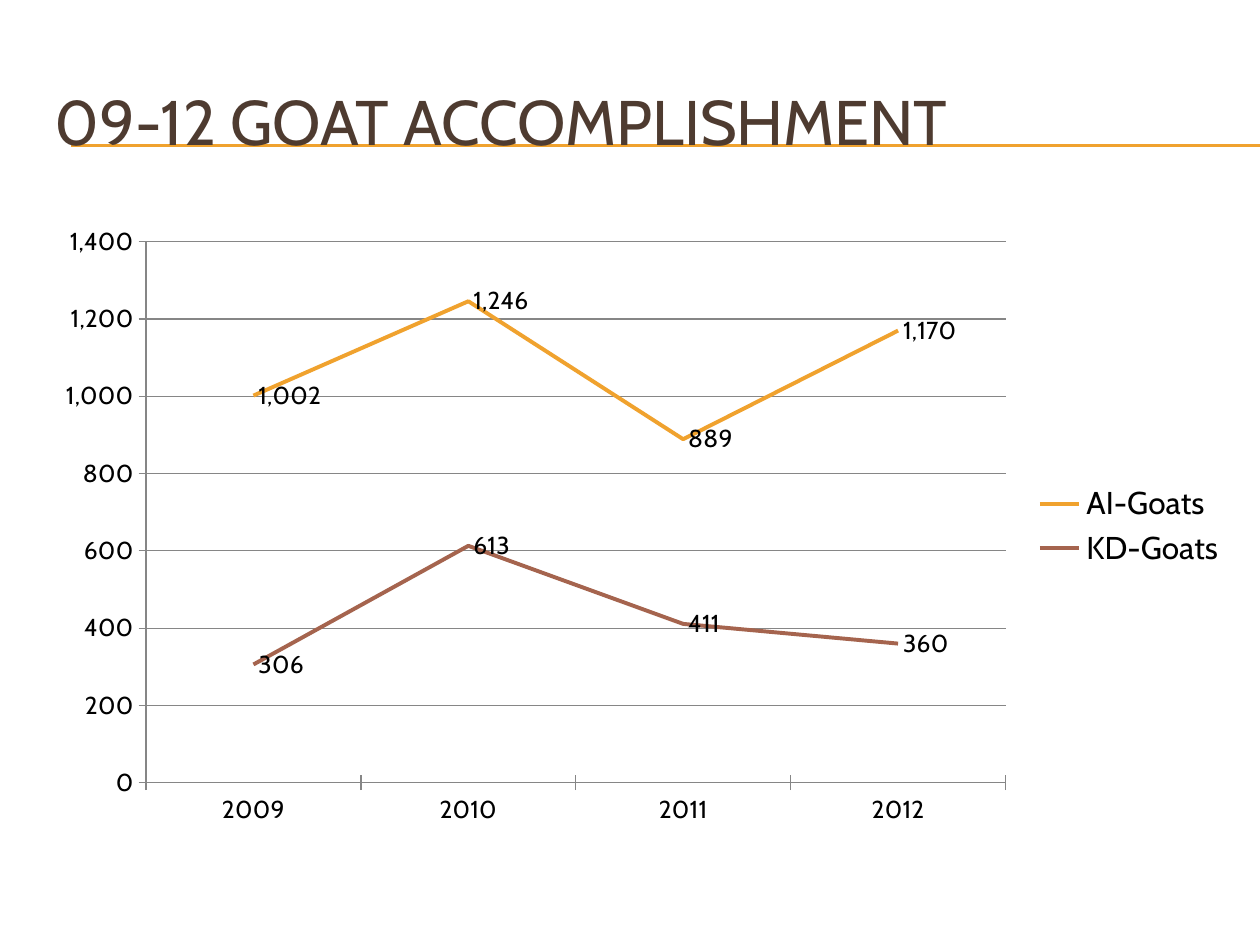
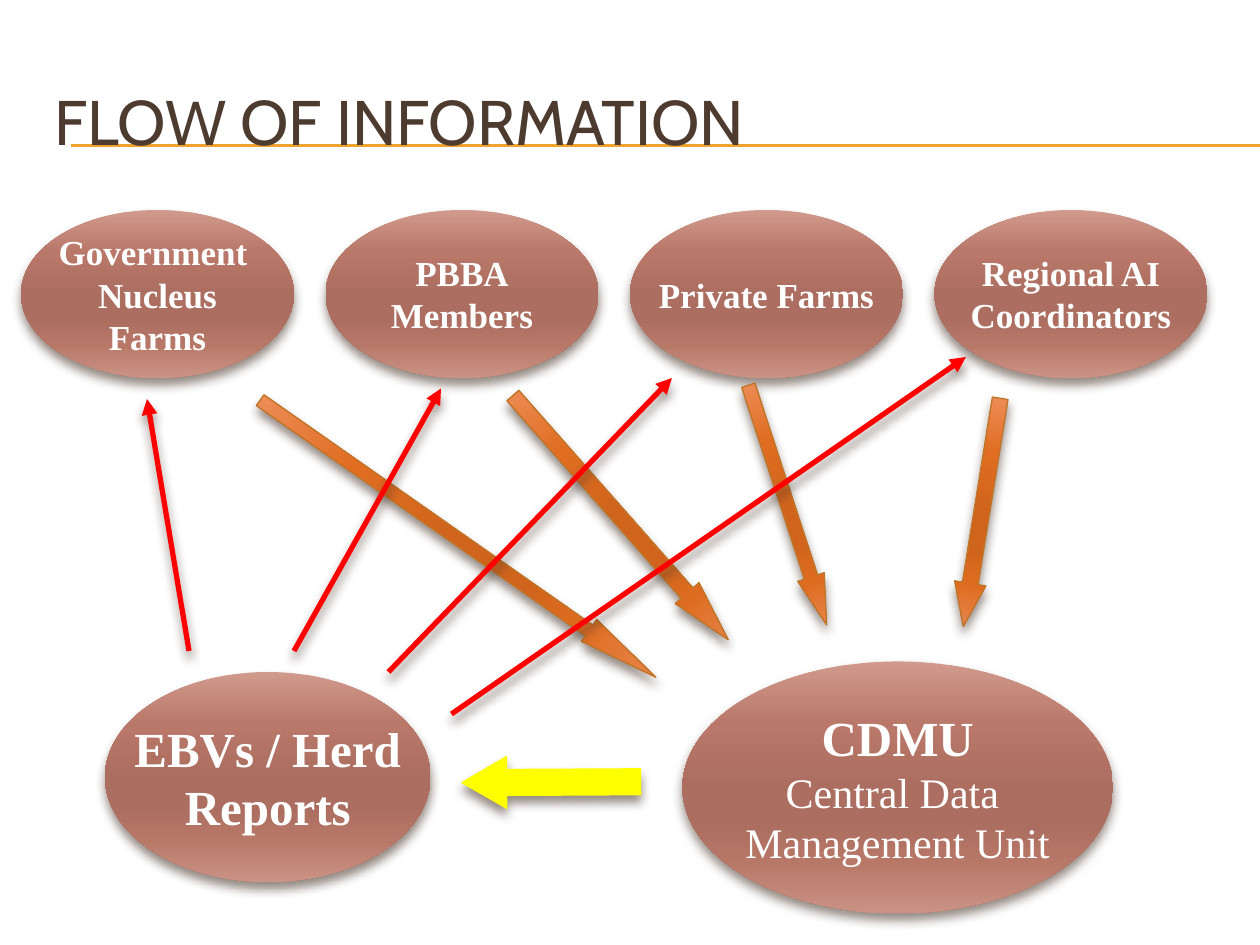
"""Build two slides: a goat accomplishment chart and an information flow diagram."""
from dataclasses import dataclass

from lxml.etree import SubElement
from pptx import Presentation
from pptx.chart.data import CategoryChartData
from pptx.dml.color import RGBColor
from pptx.enum.chart import (XL_CHART_TYPE, XL_LABEL_POSITION, XL_LEGEND_POSITION,
                             XL_MARKER_STYLE, XL_TICK_MARK)
from pptx.enum.shapes import MSO_CONNECTOR, MSO_SHAPE
from pptx.enum.text import MSO_ANCHOR, PP_ALIGN
from pptx.oxml.ns import qn
from pptx.shapes.autoshape import Shape
from pptx.shapes.connector import Connector
from pptx.slide import Slide
from pptx.util import Emu, Inches, Pt

COLORS = {
    "title": "4E3B30", "gold": "F0A22E", "brown": "A5644E", "text": "000000",
    "axis": "868686", "label": "FFFFFF", "feedback": "FF0000", "report": "FFFF00",
    "arrow edge": "C17529", "shadow": "4E3B30",
}
STOPS = (0, 25, 50, 65, 80, 100)
GRADIENTS = {
    "brown": ("D09A8D", "B97869", "AB6E60", "AB6E60", "B87868", "CA9386"),
    "orange": ("EE8F5B", "E06D21", "D0641C", "D0641C", "DE6C20", "E88852"),
}
SLIDE_WIDTH, SLIDE_HEIGHT = Inches(10), Inches(7.5)
COLUMNS, ROWS = 120, 90
HEADING_FONT, DIAGRAM_FONT = "Cabin", "Times New Roman"


@dataclass(frozen=True)
class Line:
    text: str
    size: int
    bold: bool = True


@dataclass(frozen=True)
class Node:
    column: float
    row: float
    width: float
    height: float
    lines: tuple[Line, ...]


@dataclass(frozen=True)
class BlockArrow:
    center_column: float
    center_row: float
    width: float
    length: float
    rotation: float
    head: float
    gradient: str = "orange"
    edge: str = "arrow edge"


@dataclass(frozen=True)
class Route:
    start: tuple[float, float]
    end: tuple[float, float]


SOURCE_NAMES = (("Government ", "Nucleus", "Farms"), ("PBBA", "Members"),
                ("Private Farms",), ("Regional AI", "Coordinators"))
NODES = [
    Node(2 + 29 * index, 20, 26, 16, tuple(Line(name, 20) for name in names))
    for index, names in enumerate(SOURCE_NAMES)
] + [
    Node(10, 64, 31, 20, (Line("EBVs / Herd", 28), Line("Reports", 28))),
    Node(65, 63, 41, 24, (Line("CDMU", 28), Line("Central Data ", 24, False),
                          Line("Management Unit", 24, False))),
]
BLOCK_ARROWS = (
    BlockArrow(43.62, 51.3, 2.52, 46, 305, 3.08),
    BlockArrow(59.1, 49.3, 3, 31, 318.6, 1.97),
    BlockArrow(75, 48.1, 2.64, 24, 341.9, 1.81),
    BlockArrow(93.5, 48.8, 3, 22, 9.2, 1.38),
    BlockArrow(52.5, 74.5, 4.92, 17, 89.7, 0.86, "", "report"),
)
FEEDBACK_ROUTES = (
    Route((18, 62), (14, 38)), Route((28, 62), (42, 37)),
    Route((37, 64), (64, 36)), Route((43, 68), (92, 34)),
)
YEARS = ("2009", "2010", "2011", "2012")
GOATS = {
    "AI-Goats": ("gold", (1002, 1246, 889, 1170)),
    "KD-Goats": ("brown", (306, 613, 411, 360)),
}


def color(name: str) -> RGBColor:
    return RGBColor.from_string(COLORS[name])


def across(columns: float) -> Emu:
    return Emu(round(SLIDE_WIDTH * columns / COLUMNS))


def down(rows: float) -> Emu:
    return Emu(round(SLIDE_HEIGHT * rows / ROWS))


def box(column: float, row: float, width: float, height: float) -> tuple[Emu, ...]:
    return across(column), down(row), across(width), down(height)


def set_effects(shape: Shape | Connector, shadow: bool) -> None:
    properties = shape._element.spPr
    effects = properties.find(qn("a:effectLst"))
    if effects is None:
        effects = SubElement(properties, qn("a:effectLst"))
    if shadow:
        outer = SubElement(effects, qn("a:outerShdw"), blurRad=str(Pt(6)), dist=str(Pt(4)),
                           dir="5400000", rotWithShape="0")
        tint = SubElement(outer, qn("a:srgbClr"), val=COLORS["shadow"])
        SubElement(tint, qn("a:alpha"), val="60000")


def fill_gradient(shape: Shape, name: str) -> None:
    shape.fill.gradient()
    gradient = shape._element.spPr.find(qn("a:gradFill"))
    for child in list(gradient):
        gradient.remove(child)
    stops = SubElement(gradient, qn("a:gsLst"))
    for position, value in zip(STOPS, GRADIENTS[name]):
        stop = SubElement(stops, qn("a:gs"), pos=str(position * 1000))
        SubElement(stop, qn("a:srgbClr"), val=value)
    SubElement(gradient, qn("a:lin"), ang="5400000", scaled="0")


def add_line(slide: Slide, route: Route, color_name: str, width: float,
             arrow: bool = False) -> None:
    connector = slide.shapes.add_connector(
        MSO_CONNECTOR.STRAIGHT, across(route.start[0]), down(route.start[1]),
        across(route.end[0]), down(route.end[1]))
    connector.line.color.rgb = color(color_name)
    connector.line.width = Pt(width)
    if arrow:
        SubElement(connector.line._get_or_add_ln(), qn("a:tailEnd"), type="triangle")
    set_effects(connector, shadow=arrow)


def add_titled_slide(presentation: Presentation, title: str) -> Slide:
    slide = presentation.slides.add_slide(presentation.slide_layouts[6])
    for row in (13.8, 13.92):
        add_line(slide, Route((6.75, row), (COLUMNS, row)), "gold", 0.75)
    frame = slide.shapes.add_textbox(*box(4, 6, 114, 11)).text_frame
    frame.word_wrap = True
    frame.vertical_anchor = MSO_ANCHOR.MIDDLE
    run = frame.paragraphs[0].add_run()
    run.text = title
    run.font.name = HEADING_FONT
    run.font.size = Pt(36)
    run.font.color.rgb = color("title")
    return slide


def add_goat_chart(slide: Slide) -> None:
    data = CategoryChartData(number_format="#,##0")
    data.categories = YEARS
    for name, (_, values) in GOATS.items():
        data.add_series(name, values)
    chart = slide.shapes.add_chart(XL_CHART_TYPE.LINE, *box(4, 20.4, 114, 59.4), data).chart
    chart.has_title = False
    chart.font.name = HEADING_FONT
    chart.font.size = Pt(18)
    chart.font.color.rgb = color("text")
    chart.has_legend = True
    chart.legend.position = XL_LEGEND_POSITION.RIGHT
    chart.legend.include_in_layout = False
    for axis in (chart.category_axis, chart.value_axis):
        axis.major_tick_mark = XL_TICK_MARK.CROSS
        axis.tick_labels.font.size = Pt(14)
        axis.format.line.color.rgb = color("axis")
    chart.value_axis.tick_labels.number_format = "#,##0"
    chart.value_axis.tick_labels.number_format_is_linked = False
    chart.value_axis.has_major_gridlines = True
    chart.value_axis.major_gridlines.format.line.color.rgb = color("axis")
    for series in chart.plots[0].series:
        series.smooth = False
        series.marker.style = XL_MARKER_STYLE.NONE
        series.format.line.color.rgb = color(GOATS[series.name][0])
        series.format.line.width = Pt(2.25)
        labels = series.data_labels
        labels.show_value = True
        labels.position = XL_LABEL_POSITION.RIGHT
        labels.number_format = "#,##0"
        labels.number_format_is_linked = False
        labels.font.size = Pt(14)


def add_node(slide: Slide, node: Node) -> None:
    shape = slide.shapes.add_shape(
        MSO_SHAPE.OVAL, *box(node.column, node.row, node.width, node.height))
    shape.shadow.inherit = False
    fill_gradient(shape, "brown")
    shape.line.fill.background()
    set_effects(shape, shadow=True)
    frame = shape.text_frame
    frame.word_wrap = False
    frame.vertical_anchor = MSO_ANCHOR.MIDDLE
    for index, line in enumerate(node.lines):
        paragraph = frame.add_paragraph() if index else frame.paragraphs[0]
        paragraph.alignment = PP_ALIGN.CENTER
        run = paragraph.add_run()
        run.text = line.text
        run.font.name = DIAGRAM_FONT
        run.font.size = Pt(line.size)
        run.font.bold = line.bold
        run.font.color.rgb = color("label")


def add_block_arrow(slide: Slide, arrow: BlockArrow) -> None:
    shape = slide.shapes.add_shape(MSO_SHAPE.DOWN_ARROW, *box(
        arrow.center_column - arrow.width / 2, arrow.center_row - arrow.length / 2,
        arrow.width, arrow.length))
    shape.rotation = arrow.rotation
    shape.adjustments[0] = 0.5
    shape.adjustments[1] = arrow.head
    shape.shadow.inherit = False
    if arrow.gradient:
        fill_gradient(shape, arrow.gradient)
    else:
        shape.fill.solid()
        shape.fill.fore_color.rgb = color(arrow.edge)
    shape.line.color.rgb = color(arrow.edge)
    shape.line.width = Pt(0.79)
    set_effects(shape, shadow=True)


def main() -> None:
    presentation = Presentation()
    presentation.slide_width, presentation.slide_height = SLIDE_WIDTH, SLIDE_HEIGHT
    add_goat_chart(add_titled_slide(presentation, "09-12 GOAT ACCOMPLISHMENT"))
    flow = add_titled_slide(presentation, "FLOW OF INFORMATION")
    for node in NODES:
        add_node(flow, node)
    for arrow in BLOCK_ARROWS:
        add_block_arrow(flow, arrow)
    for route in FEEDBACK_ROUTES:
        add_line(flow, route, "feedback", 3, arrow=True)
    presentation.save("out.pptx")


if __name__ == "__main__":
    main()
